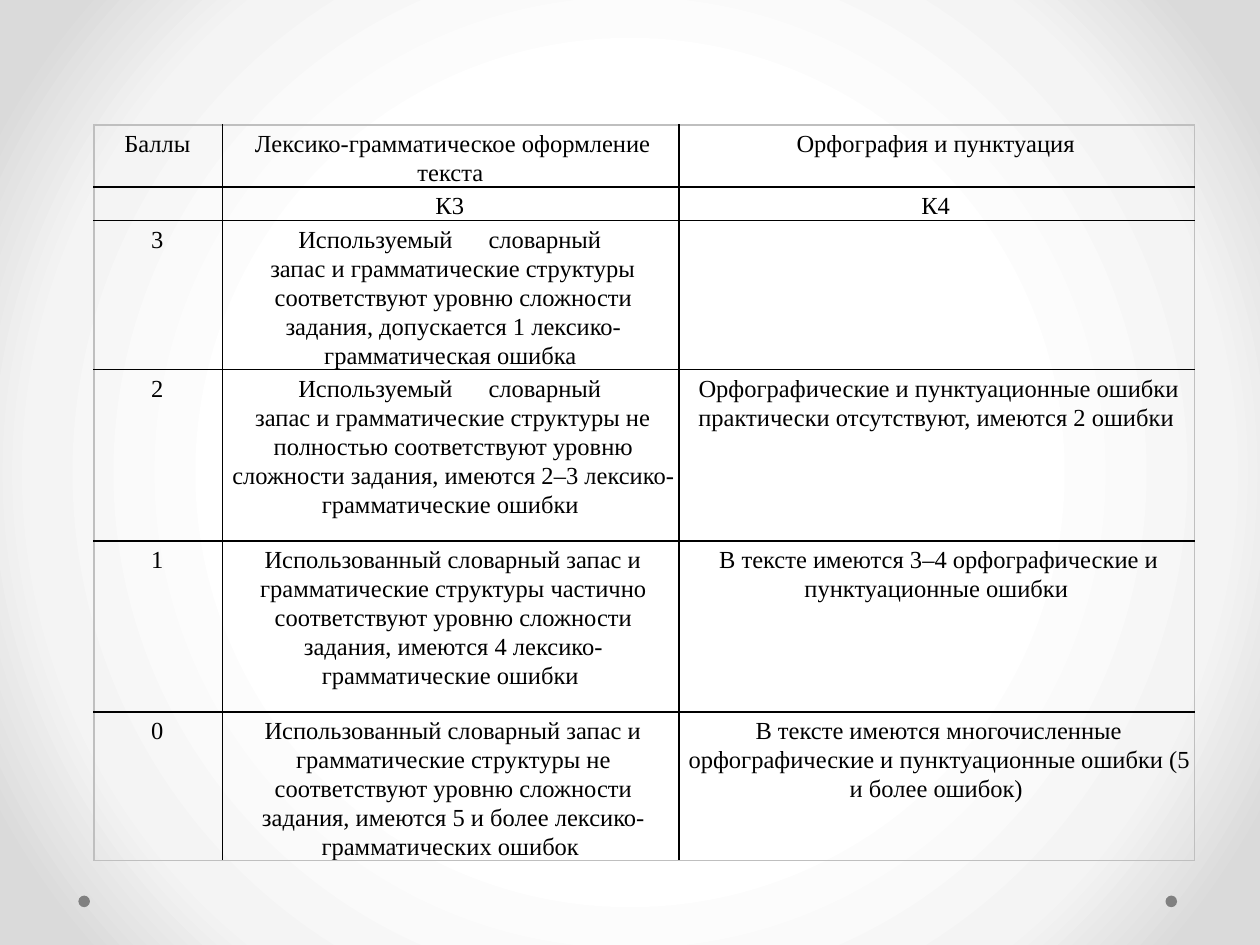
from dataclasses import dataclass

from pptx import Presentation
from pptx.dml.color import RGBColor
from pptx.enum import shapes, text
from pptx.oxml import parse_xml
from pptx.oxml.ns import nsdecls
from pptx.util import Pt


@dataclass
class Theme:
    font: str = "Times New Roman"
    size: float = 14
    ink: str = "000000"
    frame: str = "BFBFBF"
    dot: str = "808080"
    line: float = 1
    background: tuple = ((50, "FFFFFF"), (76, "F4F4F4"), (92, "DADADA"))


class Deck:
    def __init__(self, theme):
        self.theme = theme
        self.prs = Presentation()
        self.prs.slide_width, self.prs.slide_height = Pt(720), Pt(540)
        self.s = None

    def slide(self):
        self.s = self.prs.slides.add_slide(self.prs.slide_layouts[6])

    def radial_background(self):
        stops = "".join(f'<a:gs pos="{pos * 1000}"><a:srgbClr val="{color}"/></a:gs>'
                        for pos, color in self.theme.background)
        self.s.background.fill.solid()
        bg_pr = self.s.background._cSld.bg.bgPr
        bg_pr.replace(bg_pr[0], parse_xml(
            f'<a:gradFill {nsdecls("a")} rotWithShape="1"><a:gsLst>{stops}</a:gsLst>'
            '<a:path path="circle"><a:fillToRect l="50000" t="50000" r="50000" b="50000"/>'
            '</a:path></a:gradFill>'))

    def dot(self, x, y, size):
        sp = self.s.shapes.add_shape(shapes.MSO_SHAPE.OVAL, Pt(x), Pt(y), Pt(size), Pt(size))
        sp.shadow.inherit = False
        sp.fill.solid()
        sp.fill.fore_color.rgb = RGBColor.from_string(self.theme.dot)
        sp.line.fill.background()

    def table(self, x, y, widths, heights, rows):
        table = self.s.shapes.add_table(len(rows), len(widths), Pt(x), Pt(y),
                                        Pt(sum(widths)), Pt(sum(heights))).table
        table.first_row = table.horz_banding = False
        for column, width in zip(table.columns, widths):
            column.width = Pt(width)
        for i, (height, row) in enumerate(zip(heights, rows)):
            table.rows[i].height = Pt(height)
            for j, content in enumerate(row):
                outer = {"L": j == 0, "R": j == len(widths) - 1,
                         "T": i == 0, "B": i == len(rows) - 1}
                self.cell(table.cell(i, j), content, outer)

    def cell(self, cell, content, outer):
        margins = {"margin_left": Pt(3), "margin_top": Pt(2.2),
                   "margin_right": Pt(0.7), "margin_bottom": 0}
        for name, value in margins.items():
            setattr(cell, name, value)
        cell.fill.background()
        tf = cell.text_frame
        for i, line in enumerate(content.split("\n")):
            self.paragraph(tf.paragraphs[0] if i == 0 else tf.add_paragraph(), line)
        # Grey outer frame, black inner rules
        for i, (side, is_outer) in enumerate(outer.items()):
            color = self.theme.frame if is_outer else self.theme.ink
            cell._tc.tcPr.insert(i, parse_xml(
                f'<a:ln{side} {nsdecls("a")} w="{Pt(self.theme.line)}"><a:solidFill>'
                f'<a:srgbClr val="{color}"/></a:solidFill></a:ln{side}>'))

    def paragraph(self, p, line):
        if not line:
            # Keeps an empty cell from growing its row
            p._p.append(parse_xml(
                f'<a:endParaRPr {nsdecls("a")} sz="{self.theme.size * 100}"/>'))
            return
        style = {"alignment": text.PP_ALIGN.CENTER, "line_spacing": 1.07,
                 "space_after": Pt(0.2)}
        for name, value in style.items():
            setattr(p, name, value)
        p_pr = p._p.get_or_add_pPr()
        p_pr.set("marL", str(Pt(0.7)))
        p_pr.set("indent", str(Pt(-0.7)))
        if "\t" in line:
            p_pr.append(parse_xml(f'<a:tabLst {nsdecls("a")}>'
                                  f'<a:tab pos="{Pt(134)}" algn="r"/></a:tabLst>'))
        r = p.add_run()
        r.text = line + " "
        font = {"name": self.theme.font, "size": Pt(self.theme.size), "bold": False}
        for name, value in font.items():
            setattr(r.font, name, value)
        r.font.color.rgb = RGBColor.from_string(self.theme.ink)


CRITERIA = [
    ("Баллы", "Лексико-грамматическое оформление текста", "Орфография и пунктуация"),
    ("", "К3", "К4"),
    ("3", "Используемый \tсловарный\nзапас и грамматические структуры соответствуют "
          "уровню сложности задания, допускается 1 лексико-грамматическая ошибка", ""),
    ("2", "Используемый \tсловарный\nзапас и грамматические структуры не полностью "
          "соответствуют уровню сложности задания, имеются 2–3 "
          "лексико-грамматические ошибки",
     "Орфографические и пунктуационные ошибки практически отсутствуют, имеются 2 ошибки"),
    ("1", "Использованный словарный запас и грамматические структуры частично "
          "соответствуют уровню сложности задания, имеются 4 "
          "лексико-грамматические ошибки",
     "В тексте имеются 3–4 орфографические и пунктуационные ошибки"),
    ("0", "Использованный словарный запас и грамматические структуры не соответствуют "
          "уровню сложности задания, имеются 5 и более лексико-грамматических ошибок",
     "В тексте имеются многочисленные орфографические и пунктуационные ошибки "
     "(5 и более ошибок)"),
]


def main():
    deck = Deck(Theme())
    deck.slide()
    deck.radial_background()

    # Footer dots
    for x in (666, 44.8):
        deck.dot(x, 511.8, 6.6)

    # Grading criteria
    deck.table(53.8, 71.4, widths=(73.5, 260.7, 294.7),
               heights=(35.4, 18.8, 85, 97.8, 97.8, 85), rows=CRITERIA)

    deck.prs.save("out.pptx")


if __name__ == "__main__":
    main()
